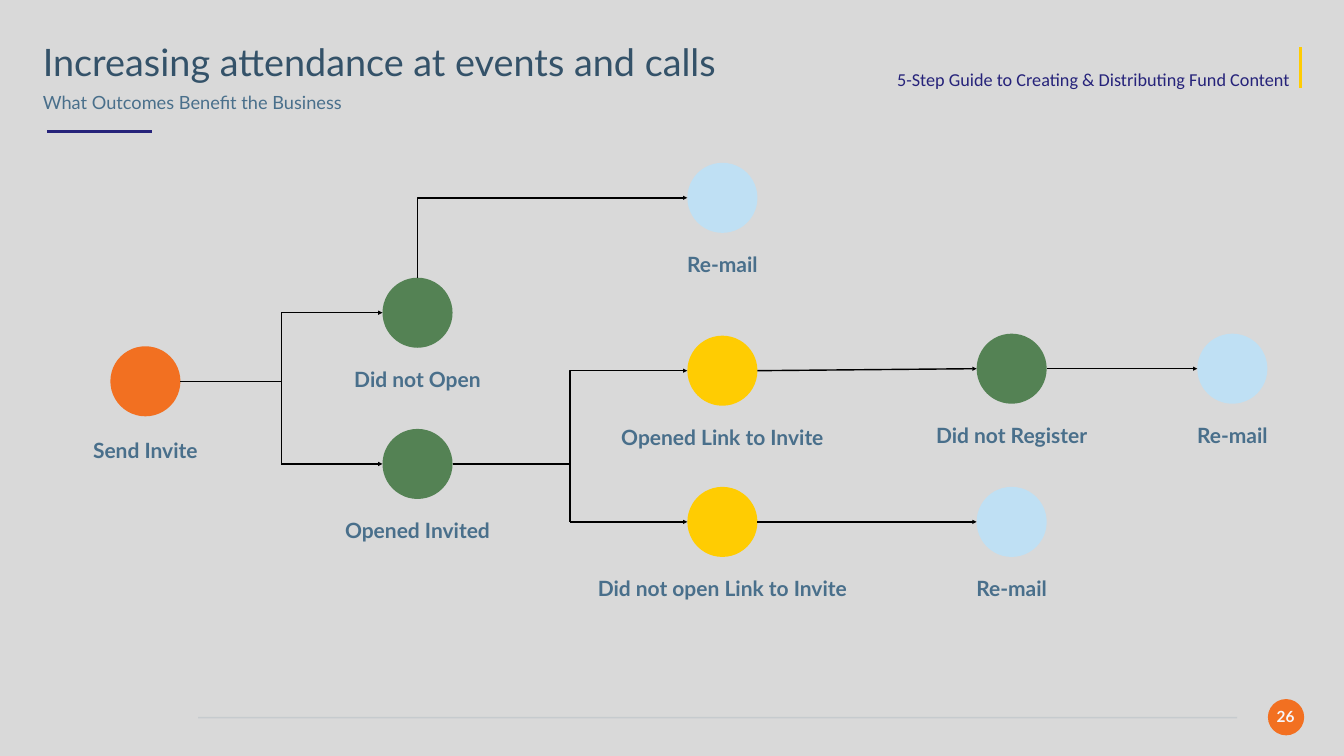
from typing import NamedTuple

from lxml import etree
from pptx import Presentation
from pptx.dml.color import RGBColor
from pptx.enum import shapes, text
from pptx.oxml import ns
from pptx.util import Inches, Pt

BACKGROUND = RGBColor(0xD9, 0xD9, 0xD9)
ORANGE = RGBColor(0xF2, 0x70, 0x21)
GREEN = RGBColor(0x54, 0x82, 0x54)
YELLOW = RGBColor(0xFF, 0xCC, 0x02)
PALE_BLUE = RGBColor(0xBF, 0xE0, 0xF4)
STEEL = RGBColor(0x49, 0x6F, 0x8B)
SLATE = RGBColor(0x34, 0x52, 0x69)
NAVY = RGBColor(0x26, 0x23, 0x7A)
NEAR_WHITE = RGBColor(0xF6, 0xF6, 0xFA)
BLACK = RGBColor(0, 0, 0)

STRAIGHT = shapes.MSO_CONNECTOR.STRAIGHT
ELBOW = shapes.MSO_CONNECTOR.ELBOW
LEFT, CENTER, RIGHT = text.PP_ALIGN.LEFT, text.PP_ALIGN.CENTER, text.PP_ALIGN.RIGHT
MIDDLE, TOP = text.MSO_ANCHOR.MIDDLE, text.MSO_ANCHOR.TOP
NODE_SIZE = 1.39
RADIUS = NODE_SIZE / 2


class Step(NamedTuple):
    label: str
    left: float
    top: float
    color: RGBColor
    label_width: float
    label_drop: float = 1.7

    @property
    def center_x(self) -> float:
        return self.left + RADIUS

    @property
    def center_y(self) -> float:
        return self.top + RADIUS

    @property
    def entry(self) -> tuple[float, float]:
        return self.left, self.center_y

    @property
    def exit(self) -> tuple[float, float]:
        return self.left + NODE_SIZE, self.center_y


SEND = Step("Send Invite", 2.19, 6.87, ORANGE, 2.33, 1.75)
NOT_OPENED = Step("Did not Open", 7.59, 5.51, GREEN, 2.77)
OPENED = Step("Opened Invited", 7.59, 8.51, GREEN, 3.17)
REMAIL_UNOPENED = Step("Re-mail", 13.64, 3.23, PALE_BLUE, 1.64)
LINK_OPENED = Step("Opened Link to Invite", 13.64, 6.66, YELLOW, 4.38)
LINK_NOT_OPENED = Step("Did not open Link to Invite", 13.64, 9.66, YELLOW, 5.43)
NOT_REGISTERED = Step("Did not Register", 19.38, 6.62, GREEN, 3.34)
REMAIL_LINK = Step("Re-mail", 19.38, 9.66, PALE_BLUE, 1.64)
REMAIL_UNREGISTERED = Step("Re-mail", 23.76, 6.62, PALE_BLUE, 1.64)
STEPS = (SEND, NOT_OPENED, LINK_OPENED, REMAIL_UNOPENED, OPENED, LINK_NOT_OPENED,
         REMAIL_LINK, REMAIL_UNREGISTERED, NOT_REGISTERED)


def add_line(slide, start, end, color=BLACK, width=2, kind=STRAIGHT, arrow=None):
    """Draw a connector; arrow is None, "headEnd" (start) or "tailEnd" (end)."""
    points = (Inches(value) for value in (*start, *end))
    line = slide.shapes.add_connector(kind, *points)
    line.line.color.rgb = color
    line.line.width = Pt(width)
    properties = line._element.spPr
    if arrow:
        etree.SubElement(properties.find(ns.qn("a:ln")), ns.qn(f"a:{arrow}"), type="triangle")
    etree.SubElement(properties, ns.qn("a:effectLst"))
    return line


def add_circle(slide, left: float, top: float, size: float, color: RGBColor) -> None:
    circle = slide.shapes.add_shape(shapes.MSO_SHAPE.OVAL, Inches(left), Inches(top),
                                    Inches(size), Inches(size))
    circle.shadow.inherit = False
    circle.fill.solid()
    circle.fill.fore_color.rgb = color
    circle.line.fill.background()


def write(box, words: str, size: int, color: RGBColor, align=LEFT, anchor=MIDDLE,
          font: str = "Lato", bold: bool = False) -> None:
    frame = box.text_frame
    frame.text = words
    frame.word_wrap = False
    frame.auto_size = text.MSO_AUTO_SIZE.NONE
    frame.vertical_anchor = anchor
    frame.margin_left = frame.margin_right = Inches(0.06)
    frame.margin_top = frame.margin_bottom = Inches(0.06)
    paragraph = frame.paragraphs[0]
    paragraph.alignment = align
    style = paragraph.runs[0].font
    style.name, style.size, style.bold = font, Pt(size), bold
    style.color.rgb = color


def add_text(slide, left: float, top: float, width: float, height: float,
             words: str, size: int, color: RGBColor, **style):
    box = slide.shapes.add_textbox(Inches(left), Inches(top), Inches(width), Inches(height))
    write(box, words, size, color, **style)
    return box


def add_frame(slide) -> None:
    """Add the header, the footer rule and the page number."""
    add_circle(slide, 25.16, 13.87, 0.72, ORANGE)
    footer = add_line(slide, (3.93, 14.24), (24.55, 14.24), STEEL)
    tint = footer._element.spPr.find(".//" + ns.qn("a:srgbClr"))
    etree.SubElement(tint, ns.qn("a:alpha"), val="12000")
    add_line(slide, (0.93, 2.61), (3.01, 2.61), NAVY, 5)
    guide = add_text(slide, 17.65, 1.23, 8.01, 0.6,
                     "5-Step Guide to Creating & Distributing Fund Content",
                     26, NAVY, align=RIGHT, font="Calibri")
    guide.text_frame.paragraphs[0].line_spacing = 1.2
    add_line(slide, (25.8, 1.75), (25.8, 0.93), YELLOW, 4)
    add_text(slide, 25.27, 13.97, 0.48, 0.49, "26", 22, NEAR_WHITE,
             align=CENTER, anchor=TOP, bold=True)

    title = slide.shapes.title
    title.left, title.top = Inches(0.79), Inches(0.7)
    title.width, title.height = Inches(13.76), Inches(1.02)
    write(title, "Increasing attendance at events and calls", 54, SLATE)
    add_text(slide, 0.79, 1.76, 6.13, 0.55, "What Outcomes Benefit the Business", 26, STEEL)


def add_step(slide, step: Step) -> None:
    add_circle(slide, step.left, step.top, NODE_SIZE, step.color)
    add_text(slide, step.center_x - step.label_width / 2, step.top + step.label_drop,
             step.label_width, 0.62, step.label, 30, STEEL, align=CENTER, bold=True)


def add_fork(slide, source: Step, upper: Step, lower: Step) -> None:
    """Lead from one step to two, branching halfway across the gap."""
    add_line(slide, source.exit, upper.entry, kind=ELBOW, arrow="tailEnd")
    middle = (source.exit[0] + upper.left) / 2
    corner = (middle, lower.center_y)
    add_line(slide, (middle, source.center_y), corner)
    add_line(slide, corner, lower.entry, arrow="tailEnd")


def add_flow(slide) -> None:
    for step in STEPS:
        add_step(slide, step)
    add_fork(slide, SEND, NOT_OPENED, OPENED)
    add_fork(slide, OPENED, LINK_OPENED, LINK_NOT_OPENED)
    corner = add_line(slide, REMAIL_UNOPENED.entry, (NOT_OPENED.center_x, NOT_OPENED.top),
                      kind=ELBOW, arrow="headEnd")
    corner._element.spPr.find(ns.qn("a:prstGeom")).set("prst", "bentConnector2")
    for source, target in ((LINK_OPENED, NOT_REGISTERED),
                           (NOT_REGISTERED, REMAIL_UNREGISTERED),
                           (LINK_NOT_OPENED, REMAIL_LINK)):
        add_line(slide, source.exit, target.entry, arrow="tailEnd")


def main() -> None:
    deck = Presentation()
    deck.slide_width, deck.slide_height = Inches(26.67), Inches(15)
    slide = deck.slides.add_slide(deck.slide_layouts.get_by_name("Title Only"))
    slide.background.fill.solid()
    slide.background.fill.fore_color.rgb = BACKGROUND
    add_frame(slide)
    add_flow(slide)
    deck.save("out.pptx")


if __name__ == "__main__":
    main()
